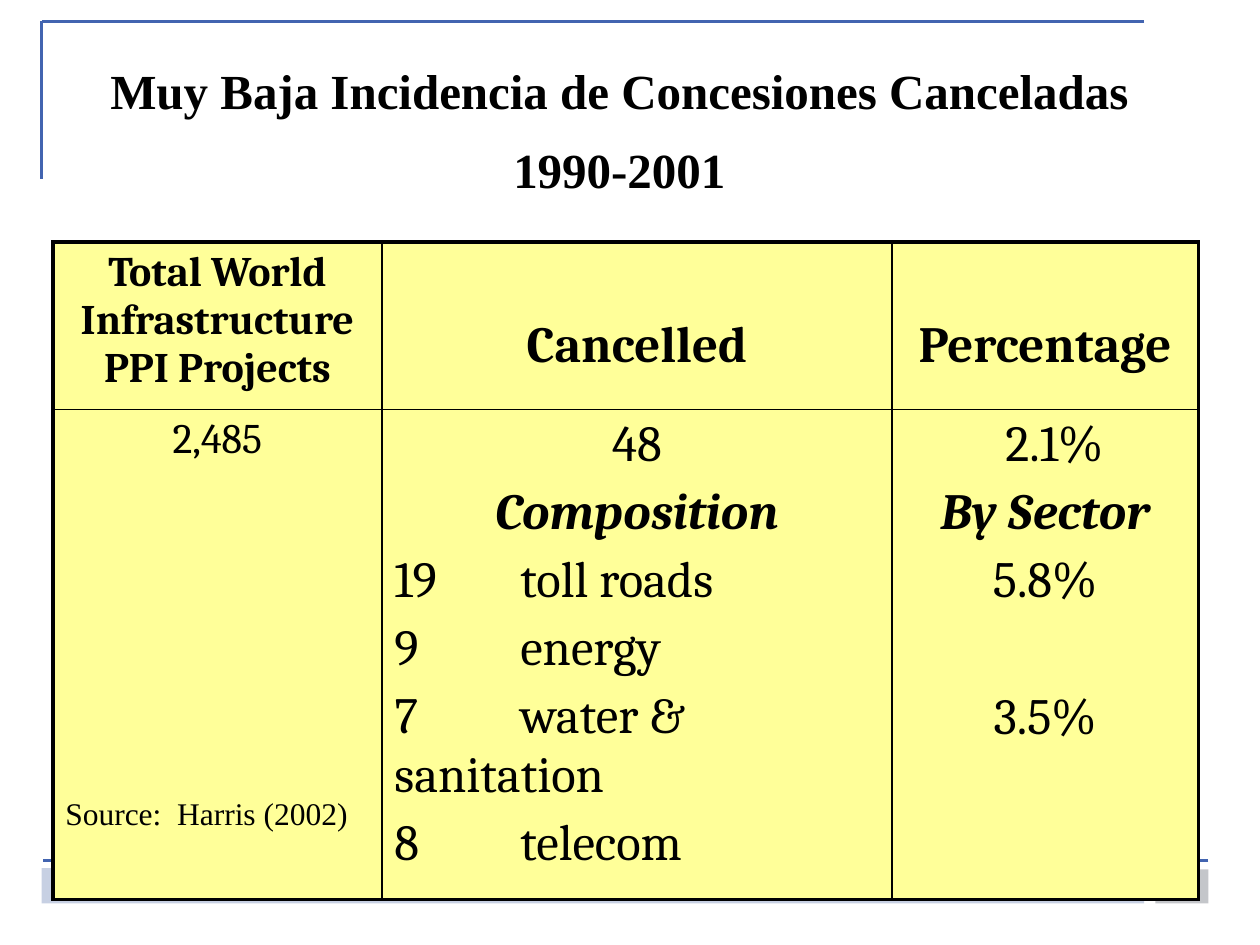
"""Build the slide on cancelled infrastructure concessions."""
from lxml import etree
from pptx import Presentation
from pptx.dml.color import RGBColor
from pptx.enum.shapes import MSO_CONNECTOR, MSO_SHAPE
from pptx.enum.text import MSO_ANCHOR, MSO_AUTO_SIZE, PP_ALIGN
from pptx.oxml.ns import qn
from pptx.util import Inches, Pt

LEFT, CENTER = PP_ALIGN.LEFT, PP_ALIGN.CENTER
TOP, NO_AUTOSIZE = MSO_ANCHOR.TOP, MSO_AUTO_SIZE.NONE
STRAIGHT, RECTANGLE = MSO_CONNECTOR.STRAIGHT, MSO_SHAPE.RECTANGLE

COLORS = {"text": "000000", "rule": "4264B0", "band": "C7D0E3",
          "number": "C4C6CA", "cell": "FFFF99"}
TITLE = {"name": "Times New Roman", "size": Pt(28), "bold": True}
SOURCE = {"name": "Times New Roman", "size": Pt(18)}
SMALL = {"name": "Cambria", "size": Pt(24)}
LARGE = {"name": "Cambria", "size": Pt(29)}
SMALL_HEAD = {**SMALL, "bold": True}
LARGE_HEAD = {**LARGE, "bold": True}
SUBHEAD = {**LARGE_HEAD, "italic": True}

CELL_MARGIN = 0.05
HEADER_DROP = 0.59
LINE_GAP = Pt(5.4)
SKIPPED_LINE_GAP = Pt(44.6)
TITLE_GAP = Pt(15)

COLUMN_WIDTHS = [2.61, 4.05, 2.43]
ROW_HEIGHTS = [1.33, 3.89]
CENTERED = {"alignment": CENTER, "space_before": LINE_GAP}
LISTED = {"alignment": LEFT, "space_before": LINE_GAP}
AFTER_SKIP = {"alignment": CENTER, "space_before": SKIPPED_LINE_GAP}
CELLS = [
    [
        [("Total World Infrastructure PPI Projects", SMALL_HEAD, CENTERED)],
        [("Cancelled", LARGE_HEAD, CENTERED)],
        [("Percentage", LARGE_HEAD, CENTERED)],
    ],
    [
        [("2,485", SMALL, CENTERED)],
        [("48", LARGE, CENTERED), ("Composition", SUBHEAD, CENTERED)]
        + [(item, LARGE, LISTED) for item in (
            "19\ttoll roads", "9 \tenergy", "7 \twater & sanitation", "8 \ttelecom")],
        [("2.1%", LARGE, LISTED), ("By Sector", SUBHEAD, CENTERED),
         ("5.8%", LARGE, CENTERED), ("3.5%", LARGE, AFTER_SKIP)],
    ],
]


class SlideBuilder:
    """Hold the slide and draw each kind of element in its style."""

    def __init__(self, presentation):
        """Add a title-only slide."""
        self.slide = presentation.slides.add_slide(presentation.slide_layouts[5])

    def color(self, name):
        """Return a named colour."""
        return RGBColor.from_string(COLORS[name])

    def fill_text(self, text_frame, lines):
        """Fill a text frame with formatted paragraphs."""
        text_frame.text = "\n".join(text for text, _, _ in lines)
        for index, (_, font_format, paragraph_format) in enumerate(lines):
            paragraph = text_frame.paragraphs[index]
            for name, value in paragraph_format.items():
                if index or name != "space_before":
                    setattr(paragraph, name, value)
            font = paragraph.runs[0].font
            for name, value in {"bold": False, "italic": False, **font_format}.items():
                setattr(font, name, value)
            font.color.rgb = self.color("text")

    def place(self, shape, left, top, width, height):
        """Move and size a shape."""
        box = {"left": left, "top": top, "width": width, "height": height}
        for name, value in box.items():
            setattr(shape, name, Inches(value))

    def title(self, lines, *box):
        """Fill the title placeholder."""
        shape = self.slide.shapes.title
        self.place(shape, *box)
        text_frame = shape.text_frame
        self.fill_text(text_frame, lines)
        settings = {"word_wrap": True, "vertical_anchor": TOP, "auto_size": NO_AUTOSIZE}
        for name, value in settings.items():
            setattr(text_frame, name, value)

    def rule(self, *points):
        """Draw a straight rule."""
        connector = self.slide.shapes.add_connector(STRAIGHT, *map(Inches, points))
        connector.line.color.rgb = self.color("rule")
        connector.line.width = Pt(1.5)
        etree.SubElement(connector._element.spPr, qn("a:effectLst"))

    def rectangle(self, color_name, *box):
        """Draw a plain filled rectangle."""
        shape = self.slide.shapes.add_shape(RECTANGLE, *map(Inches, box))
        shape.shadow.inherit = False
        shape.fill.solid()
        shape.fill.fore_color.rgb = self.color(color_name)
        shape.line.fill.background()

    def text(self, lines, *box):
        """Add a wrapped text box."""
        text_frame = self.slide.shapes.add_textbox(*map(Inches, box)).text_frame
        text_frame.word_wrap = True
        self.fill_text(text_frame, lines)

    def borders(self, cell, widths):
        """Set the width in points of each cell border."""
        properties = cell._tc.get_or_add_tcPr()
        for side, width in widths.items():
            border = etree.SubElement(properties, qn(f"a:ln{side}"), w=str(Pt(width)))
            fill = etree.SubElement(border, qn("a:solidFill"))
            etree.SubElement(fill, qn("a:srgbClr"), val=COLORS["text"])

    def table(self, rows, left, top):
        """Add the table with a heavy outer frame and thin inner borders."""
        row_count, column_count = len(ROW_HEIGHTS), len(COLUMN_WIDTHS)
        table = self.slide.shapes.add_table(
            row_count, column_count, Inches(left), Inches(top),
            Inches(sum(COLUMN_WIDTHS)), Inches(sum(ROW_HEIGHTS))).table
        for column, width in zip(table.columns, COLUMN_WIDTHS):
            column.width = Inches(width)
        for row, height in zip(table.rows, ROW_HEIGHTS):
            row.height = Inches(height)
        for row_index, row in enumerate(rows):
            for column_index, lines in enumerate(row):
                cell = table.cell(row_index, column_index)
                self.fill_text(cell.text_frame, lines)
                dropped = row_index == 0 and column_index > 0
                cell.margin_top = Inches(HEADER_DROP if dropped else CELL_MARGIN)
                outer = {"L": column_index == 0, "R": column_index == column_count - 1,
                         "T": row_index == 0, "B": row_index == row_count - 1}
                self.borders(cell, {side: 2.25 if edge else 1 for side, edge in outer.items()})
                cell.fill.solid()
                cell.fill.fore_color.rgb = self.color("cell")
        return table

    def indent(self, paragraph, distance):
        """Indent a paragraph from the left."""
        paragraph._p.get_or_add_pPr().set("marL", str(Inches(distance)))

    def tab_stop(self, paragraph, position):
        """Give a paragraph one left tab stop."""
        stops = etree.SubElement(paragraph._p.get_or_add_pPr(), qn("a:tabLst"))
        etree.SubElement(stops, qn("a:tab"), pos=str(Inches(position)), algn="l")


def main():
    """Build and save the slide."""
    presentation = Presentation()
    presentation.slide_width, presentation.slide_height = Inches(10), Inches(7.5)
    builder = SlideBuilder(presentation)

    builder.rule(9.08, 0.17, 0.33, 0.17)
    builder.rule(0.33, 0.17, 0.33, 1.42)
    builder.rule(9.59, 6.83, 0.34, 6.83)
    builder.rectangle("band", 0.33, 6.89, 8.75, 0.28)
    builder.rectangle("number", 9.17, 6.9, 0.42, 0.27)

    title_format = {"alignment": CENTER, "line_spacing": 0.9, "space_before": TITLE_GAP}
    title_lines = ["Muy Baja Incidencia de Concesiones Canceladas", "1990-2001"]
    builder.title([(line, TITLE, title_format) for line in title_lines],
                  0.58, 0.48, 8.67, 1.18)

    table = builder.table(CELLS, 0.42, 1.92)
    for paragraph in table.cell(1, 1).text_frame.paragraphs[2:]:
        builder.tab_stop(paragraph, 1)
    builder.indent(table.cell(1, 2).text_frame.paragraphs[0], 0.8)

    builder.text([("Source:  Harris (2002)", SOURCE, {"alignment": LEFT})],
                 0.42, 6.25, 5.58, 0.4)
    presentation.save("out.pptx")


if __name__ == "__main__":
    main()
